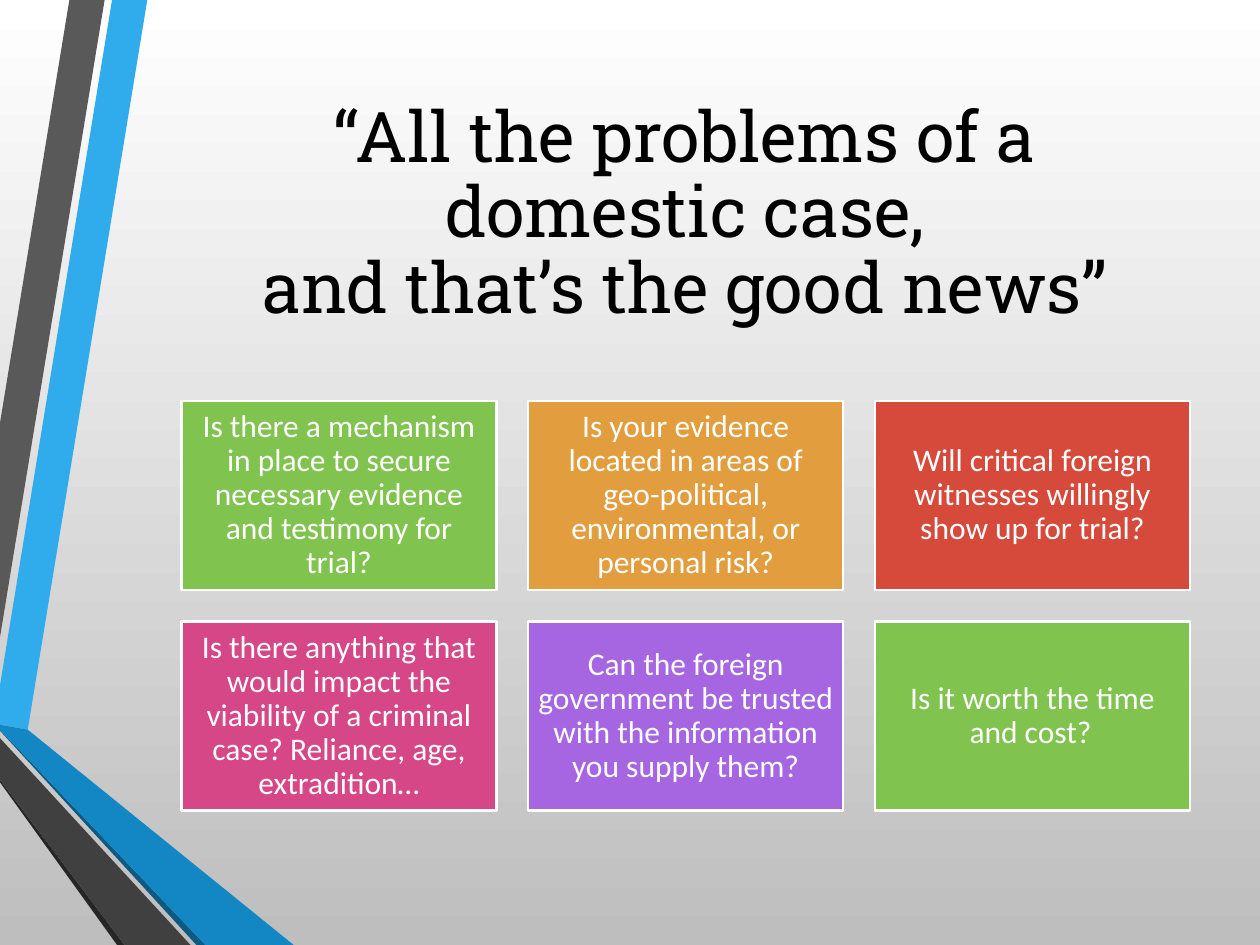
from pptx import Presentation
from pptx.dml.color import RGBColor
from pptx.enum.shapes import MSO_SHAPE as Shape
from pptx.enum.text import MSO_ANCHOR as Anchor, MSO_AUTO_SIZE as AutoSize, PP_ALIGN as Align
from pptx.util import Cm, Pt


def color(hex_string):
    return RGBColor.from_string(hex_string)


def write_text(shape, text, inset, font_format):
    """Fill a shape with centred, wrapped text."""
    frame = shape.text_frame
    frame.text = text
    frame_format = {"word_wrap": True, "auto_size": AutoSize.NONE, "vertical_anchor": Anchor.MIDDLE}
    for side in ("left", "top", "right", "bottom"):
        frame_format[f"margin_{side}"] = inset
    for name, value in frame_format.items():
        setattr(frame, name, value)
    paragraph = frame.paragraphs[0]
    paragraph.alignment = Align.CENTER
    paragraph.line_spacing = 0.9
    for run in paragraph.runs:
        for name, value in font_format.items():
            if name == "color":
                run.font.color.rgb = color(value)
            else:
                setattr(run.font, name, value)


presentation = Presentation()
presentation.slide_width, presentation.slide_height = Cm(25.4), Cm(19.05)
slide = presentation.slides.add_slide(presentation.slide_layouts[5])

# Background gradient, white at the top
background = slide.background.fill
background.gradient()
background.gradient_angle = 270
for stop, stop_color in zip(background.gradient_stops, ("FFFFFF", "BEBEBE")):
    stop.color.rgb = color(stop_color)

# Ribbons along the left edge, corner points in centimetres
ribbons = [
    ("30ACEC", [(0, 13.82), (0, 14.61), (0.56, 14.71), (2.97, 0), (2.26, 0)]),
    ("595959", [(2.11, 0), (1.4, 0), (0, 8.53), (0, 12.85)]),
    ("262626", [(0, 15.72), (0, 15.77), (2.36, 19.05), (2.51, 19.05)]),
    ("0C5A82", [(0, 14.71), (0, 14.73), (3.96, 19.05), (4.14, 19.05)]),
    ("1287C3", [(0, 14.71), (4.14, 19.05), (5.92, 19.05), (0.56, 14.71), (0, 14.61)]),
    ("404040", [(0, 15.72), (2.51, 19.05), (3.84, 19.05), (0, 14.88)]),
]
for ribbon_color, corners in ribbons:
    points = [(Cm(x), Cm(y)) for x, y in corners]
    builder = slide.shapes.build_freeform(*points[0])
    builder.add_line_segments(points[1:], close=True)
    ribbon = builder.convert_to_shape()
    ribbon.shadow.inherit = False
    ribbon.fill.solid()
    ribbon.fill.fore_color.rgb = color(ribbon_color)
    ribbon.line.fill.background()

# Title
title = slide.shapes.title
title.left, title.top, title.width, title.height = Cm(3.66), Cm(1.9), Cm(20.29), Cm(4.88)
write_text(title, "“All the problems of a domestic case,\vand that’s the good news”", Cm(0.25),
           {"name": "Roboto Slab", "size": Pt(40), "color": "000000"})

# Question cards, three to a row
questions = [
    ("80C34F", "Is there a mechanism in place to secure necessary evidence and testimony for trial?"),
    ("E29D3E", "Is your evidence located in areas of geo-political, environmental, or personal risk?"),
    ("D64A3B", "Will critical foreign witnesses willingly show up for trial?"),
    ("D64787", "Is there anything that would impact the viability of a criminal case? "
               "Reliance, age, extradition…"),
    ("A666E1", "Can the foreign government be trusted with the information you supply them?"),
    ("80C34F", "Is it worth the time and cost?\t"),
]
columns = 3
card_left, card_top = Cm(3.66), Cm(8.08)
card_width, card_height, gap = Cm(6.35), Cm(3.81), Cm(0.64)
for index, (card_color, question) in enumerate(questions):
    row, column = divmod(index, columns)
    card = slide.shapes.add_shape(
        Shape.RECTANGLE,
        card_left + column * (card_width + gap), card_top + row * (card_height + gap),
        card_width, card_height)
    card.shadow.inherit = False
    card.fill.solid()
    card.fill.fore_color.rgb = color(card_color)
    card.line.color.rgb = color("FFFFFF")
    card.line.width = Pt(1.25)
    write_text(card, question, Cm(0.18), {"name": "Calibri", "size": Pt(18), "color": "FFFFFF"})

presentation.save("out.pptx")
